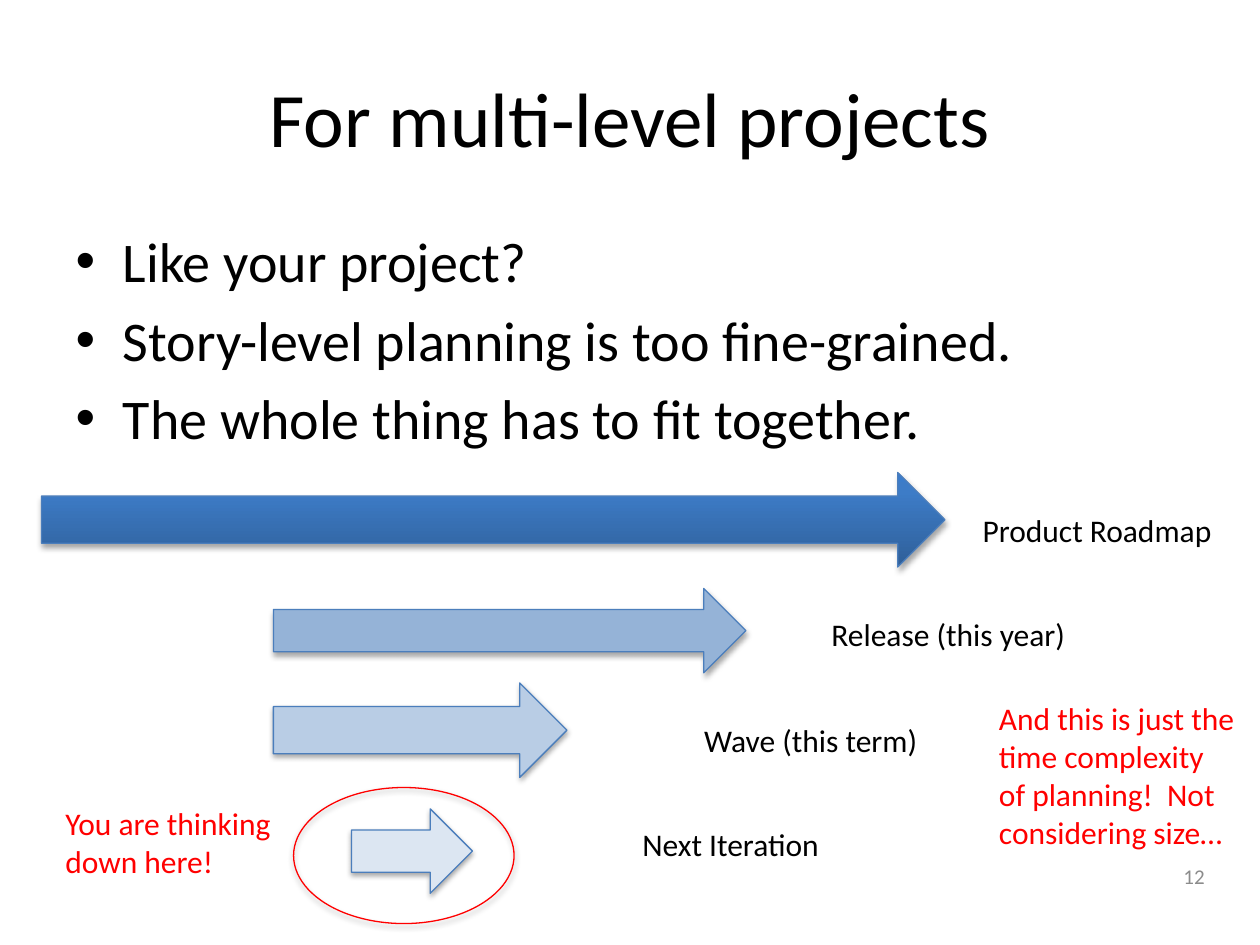
from copy import deepcopy
from dataclasses import dataclass

from lxml.etree import SubElement
from pptx import Presentation
from pptx.dml.color import RGBColor
from pptx.enum.shapes import MSO_SHAPE
from pptx.enum.text import MSO_ANCHOR, PP_ALIGN
from pptx.oxml.ns import qn
from pptx.util import Inches, Pt


@dataclass(frozen=True)
class Theme:
    font: str = "Calibri"
    ink: str = "000000"
    warning: str = "FF0000"
    muted: str = "8C8C8C"
    outline: str = "4B7EBC"
    roadmap: tuple = ((0, "2F5F99"), (0.8, "3D7CC7"), (1, "3A7CCB"))
    release: str = "95B3D7"
    wave: str = "B9CDE5"
    iteration: str = "DCE6F2"
    title_size: int = 44
    body_size: int = 32
    label_size: int = 18
    number_size: int = 12


THEME = Theme()


def place(shape, box):
    shape.left, shape.top, shape.width, shape.height = map(Inches, box)


def write(frame, *lines, size=THEME.label_size, color=THEME.ink,
          align=PP_ALIGN.LEFT, anchor=MSO_ANCHOR.TOP, wrap=True):
    frame.word_wrap = wrap
    frame.vertical_anchor = anchor
    for index, line in enumerate(lines):
        paragraph = frame.add_paragraph() if index else frame.paragraphs[0]
        paragraph.alignment = align
        run = paragraph.add_run()
        run.text = line
        run.font.name = THEME.font
        run.font.size = Pt(size)
        run.font.color.rgb = RGBColor.from_string(color)


def add_text(slide, box, text, **text_format):
    write(slide.shapes.add_textbox(*map(Inches, box)).text_frame, text, **text_format)


def fill_gradient(shape, stops):
    """Fill upwards from the first stop, at the bottom, to the last."""
    shape.fill.gradient()
    shape.fill.gradient_angle = 90
    stop_list = shape._element.spPr.find(qn("a:gradFill")).find(qn("a:gsLst"))
    stop_list.insert(1, deepcopy(stop_list[0]))
    for stop, (position, color) in zip(shape.fill.gradient_stops, stops):
        stop.position = position
        stop.color.rgb = RGBColor.from_string(color)


def add_soft_shadow(shape):
    shape.shadow.inherit = False
    effects = shape._element.spPr.find(qn("a:effectLst"))
    shadow = SubElement(effects, qn("a:outerShdw"), blurRad="40000", dist="23000",
                        dir="5400000", rotWithShape="0")
    color = SubElement(shadow, qn("a:srgbClr"), val="000000")
    SubElement(color, qn("a:alpha"), val="35000")


def add_outlined(slide, preset, box, outline, fill=None):
    shape = slide.shapes.add_shape(preset, *map(Inches, box))
    if fill is None:
        shape.fill.background()
    elif isinstance(fill, tuple):
        fill_gradient(shape, fill)
    else:
        shape.fill.solid()
        shape.fill.fore_color.rgb = RGBColor.from_string(fill)
    shape.line.color.rgb = RGBColor.from_string(outline)
    shape.line.width = Pt(0.75)
    add_soft_shadow(shape)


def add_level(slide, arrow_box, fill, label, label_box):
    add_outlined(slide, MSO_SHAPE.RIGHT_ARROW, arrow_box, THEME.outline, fill)
    add_text(slide, label_box, label, wrap=False)


def main():
    presentation = Presentation()
    presentation.slide_width, presentation.slide_height = Inches(10), Inches(7.5)
    slide = presentation.slides.add_slide(presentation.slide_layouts[1])

    title, body = slide.placeholders
    place(title, (0.5, 0.3, 9, 1.25))
    write(title.text_frame, "For multi-level projects", size=THEME.title_size,
          align=PP_ALIGN.CENTER, anchor=MSO_ANCHOR.MIDDLE)
    place(body, (0.5, 1.75, 9, 4.95))
    write(body.text_frame, "Like your project?",
          "Story-level planning is too fine-grained.",
          "The whole thing has to fit together.", size=THEME.body_size)

    levels = [
        ((0.33, 3.75, 7.17, 0.75), THEME.roadmap,
         "Product Roadmap", (7.7, 4.01, 2.05, 0.4)),
        ((2.17, 4.67, 3.75, 0.67), THEME.release,
         "Release (this year)", (6.5, 4.83, 2.08, 0.4)),
        ((2.17, 5.42, 2.33, 0.75), THEME.wave,
         "Wave (this term)", (5.49, 5.67, 1.93, 0.4)),
        ((2.79, 6.42, 0.96, 0.67), THEME.iteration,
         "Next Iteration", (5, 6.5, 1.63, 0.4)),
    ]
    for level in levels:
        add_level(slide, *level)

    add_outlined(slide, MSO_SHAPE.OVAL, (2.33, 6.25, 1.75, 1.08), THEME.warning)
    add_text(slide, (0.42, 6.33, 2.08, 0.71), "You are thinking down here!",
             color=THEME.warning)
    add_text(slide, (7.83, 5.5, 2.08, 1.31),
             "And this is just the time complexity of planning!  Not considering size…",
             color=THEME.warning)
    add_text(slide, (7.33, 6.75, 2.33, 0.4), "12", size=THEME.number_size,
             color=THEME.muted, align=PP_ALIGN.RIGHT, anchor=MSO_ANCHOR.MIDDLE)

    presentation.save("out.pptx")


if __name__ == "__main__":
    main()
